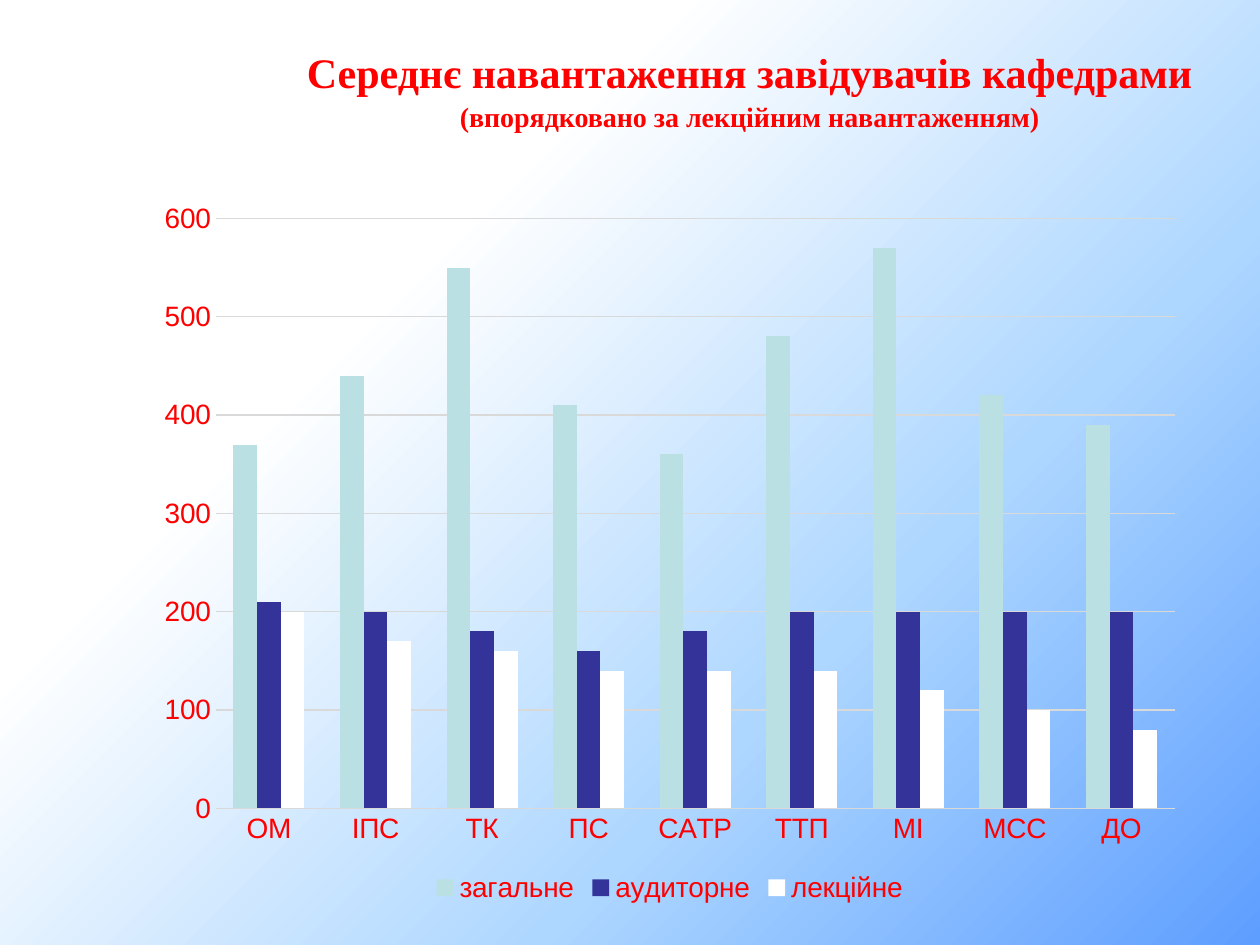
import lxml.etree
import pptx
import pptx.chart.data
import pptx.dml.color
import pptx.enum.chart
import pptx.enum.text
import pptx.oxml
import pptx.oxml.ns
import pptx.util
from pptx.util import Inches

RED = pptx.dml.color.RGBColor(0xFF, 0x00, 0x00)
GRID_GREY = pptx.dml.color.RGBColor(0xD9, 0xD9, 0xD9)
PALE_TEAL = pptx.dml.color.RGBColor(0xBB, 0xE0, 0xE3)
NAVY = pptx.dml.color.RGBColor(0x33, 0x33, 0x99)
WHITE = pptx.dml.color.RGBColor(0xFF, 0xFF, 0xFF)
SKY_BLUE = pptx.dml.color.RGBColor(0x5E, 0x9E, 0xFF)
LIGHT_BLUE = pptx.dml.color.RGBColor(0xAE, 0xD7, 0xFF)

DEPARTMENTS = ["ОМ", "ІПС", "ТК", "ПС", "САТР", "ТТП", "МІ", "МСС", "ДО"]
WORKLOADS = [
    ("загальне", PALE_TEAL, [370, 440, 550, 410, 360, 480, 570, 420, 390]),
    ("аудиторне", NAVY, [210, 200, 180, 160, 180, 200, 200, 200, 200]),
    ("лекційне", WHITE, [200, 170, 160, 140, 140, 140, 120, 100, 80]),
]
BACKGROUND_STOPS = [
    (0, SKY_BLUE, 52), (33, LIGHT_BLUE, 70), (69, WHITE, 100), (100, WHITE, 0),
]


def style_font(font, size):
    font.size = pptx.util.Pt(size)
    font.color.rgb = RED


presentation = pptx.Presentation()
presentation.slide_width = Inches(10)
presentation.slide_height = Inches(7.5)
slide = presentation.slides.add_slide(presentation.slide_layouts[5])

slide.background.fill.gradient()
gradient = slide.background._element.find(".//" + pptx.oxml.ns.qn("a:gradFill"))
for part in list(gradient):
    gradient.remove(part)
stops = lxml.etree.SubElement(gradient, pptx.oxml.ns.qn("a:gsLst"))
for position, color, opacity in BACKGROUND_STOPS:
    stops.append(pptx.oxml.parse_xml(
        f'<a:gs {pptx.oxml.ns.nsdecls("a")} pos="{position * 1000}">'
        f'<a:srgbClr val="{color}"><a:alpha val="{opacity * 1000}"/></a:srgbClr></a:gs>'))
gradient.append(pptx.oxml.parse_xml(
    f'<a:path {pptx.oxml.ns.nsdecls("a")} path="circle">'
    '<a:fillToRect l="100000" t="100000"/></a:path>'))

title = slide.shapes.title
title.left, title.top = Inches(2.17), Inches(0.29)
title.width, title.height = Inches(7.56), Inches(1.42)
title.text_frame.word_wrap = True
title.text_frame.auto_size = pptx.enum.text.MSO_AUTO_SIZE.SHAPE_TO_FIT_TEXT
title.text_frame.vertical_anchor = pptx.enum.text.MSO_ANCHOR.TOP
heading = title.text_frame.paragraphs[0]
heading.alignment = pptx.enum.text.PP_ALIGN.CENTER
heading.line_spacing = 1.07
heading.space_after = pptx.util.Pt(8)
for wording, size in [
    ("Середнє навантаження завідувачів кафедрами ", 24),
    ("(впорядковано за лекційним навантаженням)", 16),
]:
    run = heading.add_run()
    run.text = wording
    style_font(run.font, size)
    run.font.name = "Times New Roman"
    run.font.bold = True

workload_data = pptx.chart.data.CategoryChartData()
workload_data.categories = DEPARTMENTS
for name, color, hours in WORKLOADS:
    workload_data.add_series(name, hours)
chart = slide.shapes.add_chart(
    pptx.enum.chart.XL_CHART_TYPE.COLUMN_CLUSTERED,
    Inches(1.14), Inches(1.5), Inches(8.35), Inches(5.71), workload_data).chart
chart.has_title = False
chart.font.name = "Arial"
style_font(chart.font, 16)

chart.has_legend = True
chart.legend.position = pptx.enum.chart.XL_LEGEND_POSITION.BOTTOM
chart.legend.include_in_layout = False
chart.legend.font.name = "Arial"
style_font(chart.legend.font, 16)

for axis in (chart.category_axis, chart.value_axis):
    axis.major_tick_mark = pptx.enum.chart.XL_TICK_MARK.NONE
    axis.minor_tick_mark = pptx.enum.chart.XL_TICK_MARK.NONE
    axis.format.line.fill.background()
    axis.tick_labels.font.name = "Arial"
    style_font(axis.tick_labels.font, 16)
chart.value_axis.minimum_scale = 0
chart.value_axis.maximum_scale = 600
chart.value_axis.major_unit = 100
gridline = chart.value_axis.major_gridlines.format.line
gridline.color.rgb = GRID_GREY
gridline.width = pptx.util.Pt(0.75)

plot = chart.plots[0]
plot.gap_width = 150
plot.overlap = 0
plot.vary_by_categories = False
for series, (name, color, hours) in zip(plot.series, WORKLOADS):
    series.format.fill.solid()
    series.format.fill.fore_color.rgb = color
    series.invert_if_negative = False

presentation.save("out.pptx")
